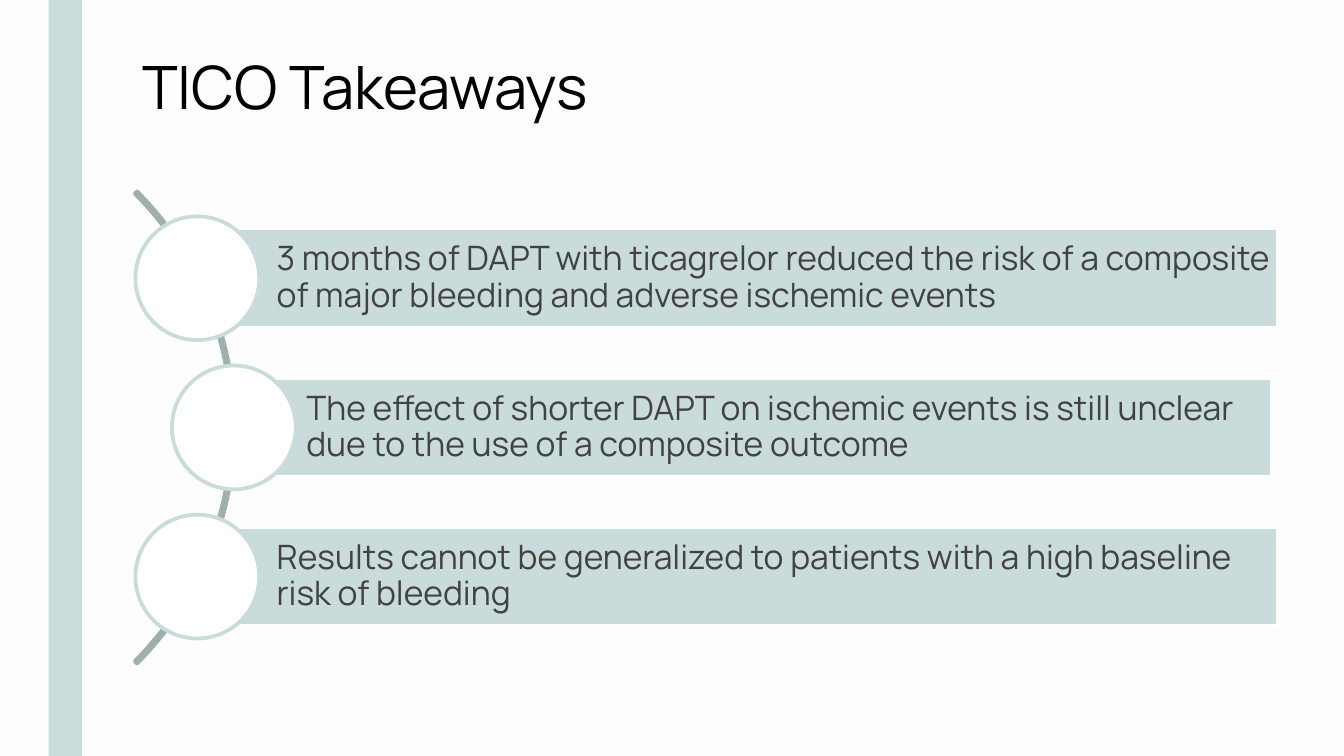
from pptx import Presentation
from pptx.dml.color import RGBColor
from pptx.enum.shapes import MSO_SHAPE as SHAPE
from pptx.enum.text import MSO_ANCHOR as ANCHOR, MSO_AUTO_SIZE as AUTO, PP_ALIGN as ALIGN
from pptx.util import Cm, Pt

PALE, WHITE, GREY = "CADBDB", "FFFFFF", "A0AEAE"
ROW_PITCH, ROW_H, CIRCLE = 2.82, 1.88, 2.34
MIDDLE_Y = 8.08
ARC_SIZE = 12.62

# bar left, bar right, circle left, wording
TAKEAWAYS = [
    (3.73, 24.15, 2.56, "3 months of DAPT with ticagrelor reduced the risk of a composite "
     "of major bleeding and adverse ischemic events"),
    (4.29, 24.03, 3.25, "The effect of shorter DAPT on ischemic events is still unclear "
     "due to the use of a composite outcome"),
    (3.73, 24.15, 2.56, "Results cannot be generalized to patients with a high baseline "
     "risk of bleeding"),
]


def rgb(value):
    return RGBColor.from_string(value)


class Deck:
    font = "Manrope"

    def __init__(self, prs):
        self.s = prs.slides.add_slide(prs.slide_layouts[5])

    def background(self, color):
        fill = self.s.background.fill
        fill.solid()
        fill.fore_color.rgb = rgb(color)

    def shape(self, kind, x, y, w, h, fill, line=None):
        sp = self.s.shapes.add_shape(kind, Cm(x), Cm(y), Cm(w), Cm(h))
        sp.shadow.inherit = False
        sp.fill.solid()
        sp.fill.fore_color.rgb = rgb(fill)
        if line:
            sp.line.color.rgb = rgb(line)
            sp.line.width = Pt(2)
        else:
            sp.line.fill.background()
        return sp

    def text(self, sp, words, size, color, left=0.25, right=0.25, spacing=1.0):
        tf = sp.text_frame
        tf.word_wrap = True
        tf.auto_size = AUTO.NONE
        tf.vertical_anchor = ANCHOR.MIDDLE
        tf.margin_left, tf.margin_right = Cm(left), Cm(right)
        tf.margin_top = tf.margin_bottom = Cm(0.13)
        p = tf.paragraphs[0]
        p.alignment = ALIGN.LEFT
        p.line_spacing = spacing
        r = p.add_run()
        r.text = words
        r.font.name = self.font
        r.font.size = Pt(size)
        r.font.color.rgb = rgb(color)

    def title(self, words, x, y, w, h):
        sp = self.s.shapes.title
        sp.left, sp.top, sp.width, sp.height = Cm(x), Cm(y), Cm(w), Cm(h)
        self.text(sp, words, 32, "000000")

    def arc(self, x, y, size):
        sp = self.shape(SHAPE.BLOCK_ARC, x, y, size, size, GREY, GREY)
        # Angles run from 315 to 45 degrees, in units of 0.6 per degree
        for i, value in enumerate((315 * 0.6, 45 * 0.6, 0.005)):
            sp.adjustments[i] = value

    def takeaway(self, center_y, left, right, circle_x, words):
        bar = self.shape(SHAPE.RECTANGLE, left, center_y - ROW_H / 2,
                         right - left, ROW_H, PALE, WHITE)
        self.text(bar, words, 18, "424242", left=1.5, right=0.13, spacing=0.9)
        self.shape(SHAPE.OVAL, circle_x, center_y - CIRCLE / 2,
                   CIRCLE, CIRCLE, WHITE, PALE)


def main():
    prs = Presentation()
    prs.slide_width, prs.slide_height = Cm(25.4), Cm(14.29)
    deck = Deck(prs)
    deck.background("FDFDFD")
    deck.shape(SHAPE.RECTANGLE, 0.92, -0.13, 0.63, 14.55, "CADCDC")
    deck.title("TICO Takeaways", 2.44, 0.81, 17.93, 1.63)
    deck.arc(-8.18, MIDDLE_Y - ARC_SIZE / 2, ARC_SIZE)
    for i, row in enumerate(TAKEAWAYS):
        deck.takeaway(MIDDLE_Y + (i - 1) * ROW_PITCH, *row)
    prs.save("out.pptx")


if __name__ == "__main__":
    main()
